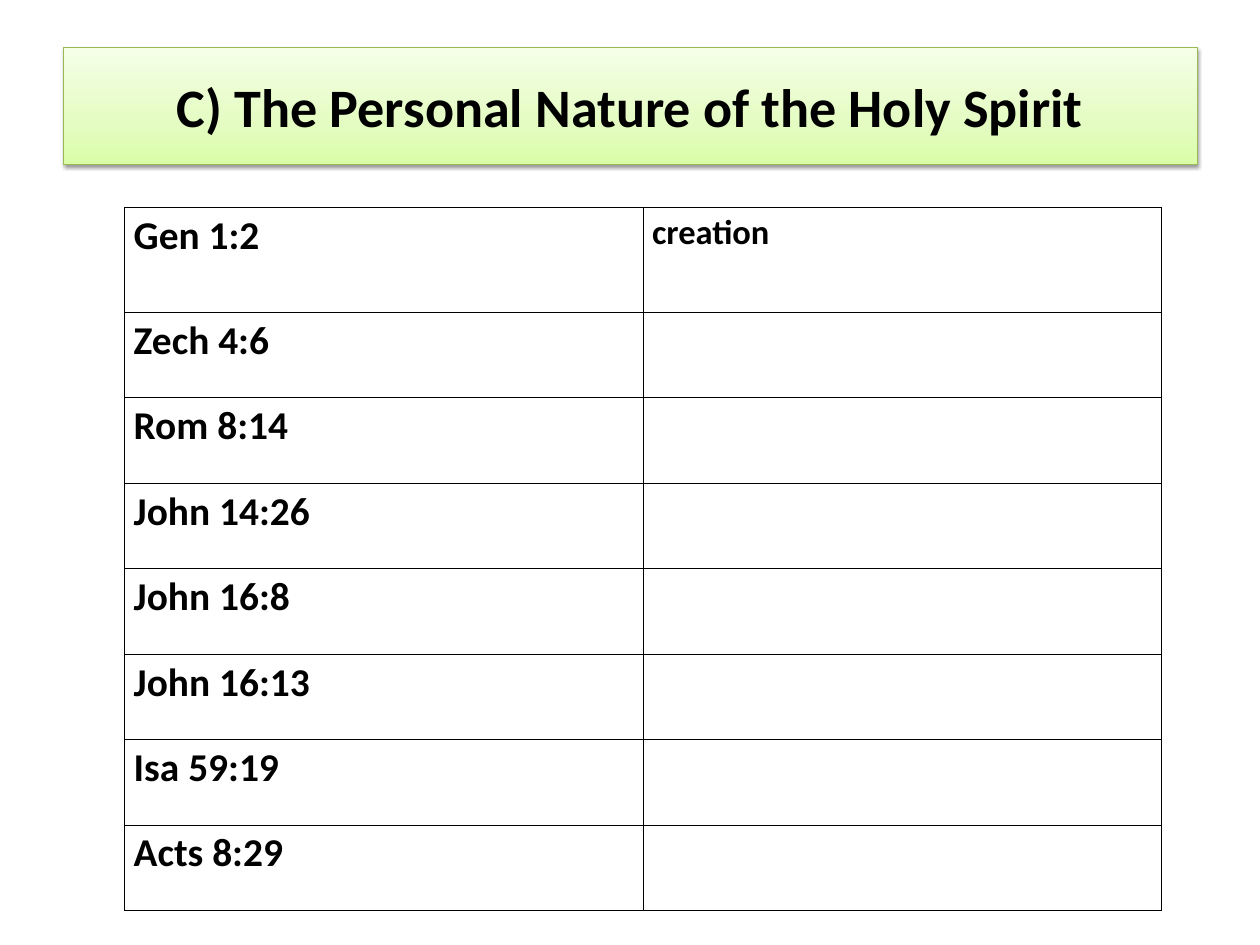
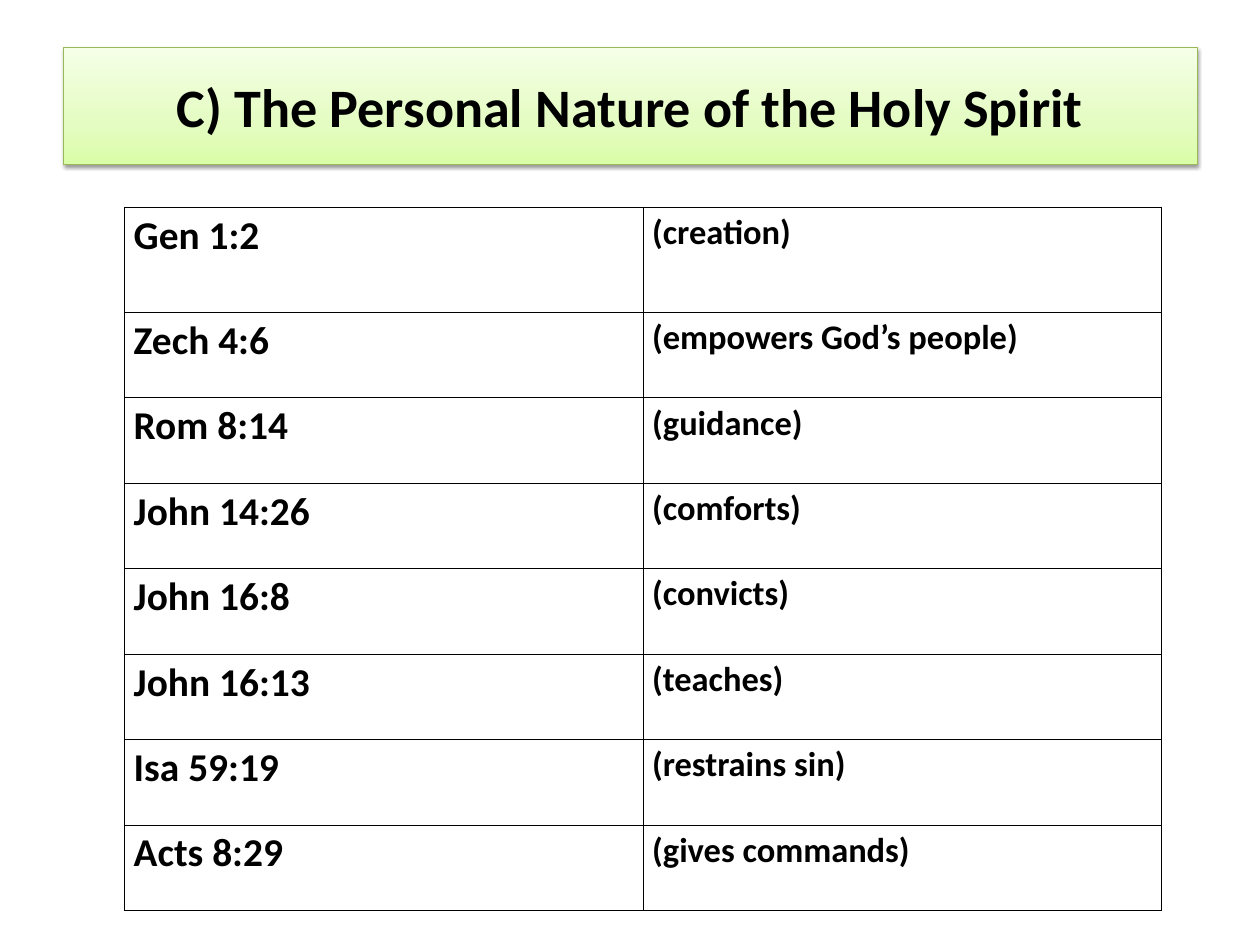
from copy import deepcopy

from lxml.etree import SubElement
from pptx import Presentation
from pptx.dml.color import RGBColor
from pptx.enum.shapes import MSO_SHAPE
from pptx.enum.text import MSO_ANCHOR, PP_ALIGN
from pptx.oxml.ns import qn
from pptx.util import Cm, Pt

BLACK = RGBColor(0x00, 0x00, 0x00)
WHITE = RGBColor(0xFF, 0xFF, 0xFF)
BAND_LINE = RGBColor(0x98, 0xB9, 0x55)
BAND_STOPS = [
    (0, RGBColor(0xDA, 0xFD, 0xA7)),
    (0.35, RGBColor(0xE4, 0xFC, 0xC2)),
    (1, RGBColor(0xF5, 0xFF, 0xE7)),
]
FONT = {"name": "Calibri", "bold": True}
TITLE = "C) The Personal Nature of the Holy Spirit"
TITLE_SIZE = Pt(44)
COLUMN_SIZES = [Pt(32), Pt(28)]
COLUMN_WIDTH = Cm(14.86)
FIRST_ROW, OTHER_ROWS = Cm(3.02), Cm(2.45)

VERSES = ["Gen 1:2", "Zech 4:6", "Rom 8:14", "John 14:26",
          "John 16:8", "John 16:13", "Isa 59:19", "Acts 8:29"]
QUESTION = ["creation"] + [""] * (len(VERSES) - 1)
ANSWERS = ["(creation)", "(empowers God’s people)", "(guidance)", "(comforts)",
           "(convicts)", "(teaches)", "(restrains sin)", "(gives commands)"]


def write(tf, text, size, align):
    p = tf.paragraphs[0]
    p.alignment = align
    r = p.add_run()
    r.text = text
    for key, value in {**FONT, "size": size}.items():
        setattr(r.font, key, value)
    r.font.color.rgb = BLACK


def add_borders(cell):
    """Draw a thin black line on all four sides of a table cell."""
    tcPr = cell._tc.get_or_add_tcPr()
    for i, side in enumerate(("lnL", "lnR", "lnT", "lnB")):
        ln = tcPr.makeelement(qn(f"a:{side}"), {"w": str(Pt(1))})
        fill = SubElement(ln, qn("a:solidFill"))
        SubElement(fill, qn("a:srgbClr"), val=str(BLACK))
        tcPr.insert(i, ln)


prs = Presentation()
prs.slide_width, prs.slide_height = Cm(36.12), Cm(27.1)

for meanings in (QUESTION, ANSWERS):
    s = prs.slides.add_slide(prs.slide_layouts[6])

    # Title band
    sp = s.shapes.add_shape(MSO_SHAPE.RECTANGLE, Cm(1.82), Cm(1.37), Cm(32.5), Cm(3.35))
    sp.fill.gradient()
    sp.fill.gradient_angle = 90
    gs_list = sp._element.spPr.find(qn("a:gradFill")).find(qn("a:gsLst"))
    gs_list.append(deepcopy(gs_list[0]))
    for stop, (position, color) in zip(sp.fill.gradient_stops, BAND_STOPS):
        stop.position = position
        stop.color.rgb = color
    sp.line.color.rgb = BAND_LINE
    sp.line.width = Pt(0.75)
    sp.shadow.inherit = False
    effects = sp._element.spPr.find(qn("a:effectLst"))
    shadow = SubElement(effects, qn("a:outerShdw"), blurRad=str(Pt(3.1)),
                        dist=str(Pt(1.6)), dir="5400000", rotWithShape="0")
    shade = SubElement(shadow, qn("a:srgbClr"), val=str(BLACK))
    SubElement(shade, qn("a:alpha"), val="38000")
    tf = sp.text_frame
    tf.word_wrap = True
    tf.vertical_anchor = MSO_ANCHOR.MIDDLE
    write(tf, TITLE, TITLE_SIZE, PP_ALIGN.CENTER)

    # Verses and what the Spirit does in each
    height = FIRST_ROW + OTHER_ROWS * (len(VERSES) - 1)
    table = s.shapes.add_table(len(VERSES), 2, Cm(3.58), Cm(5.94),
                               COLUMN_WIDTH * 2, height).table
    table.first_row = table.horz_banding = False
    for column in table.columns:
        column.width = COLUMN_WIDTH
    for i, texts in enumerate(zip(VERSES, meanings)):
        table.rows[i].height = OTHER_ROWS if i else FIRST_ROW
        for cell, text, size in zip(table.rows[i].cells, texts, COLUMN_SIZES):
            cell.fill.solid()
            cell.fill.fore_color.rgb = WHITE
            add_borders(cell)
            if text:
                write(cell.text_frame, text, size, PP_ALIGN.LEFT)

prs.save("out.pptx")
